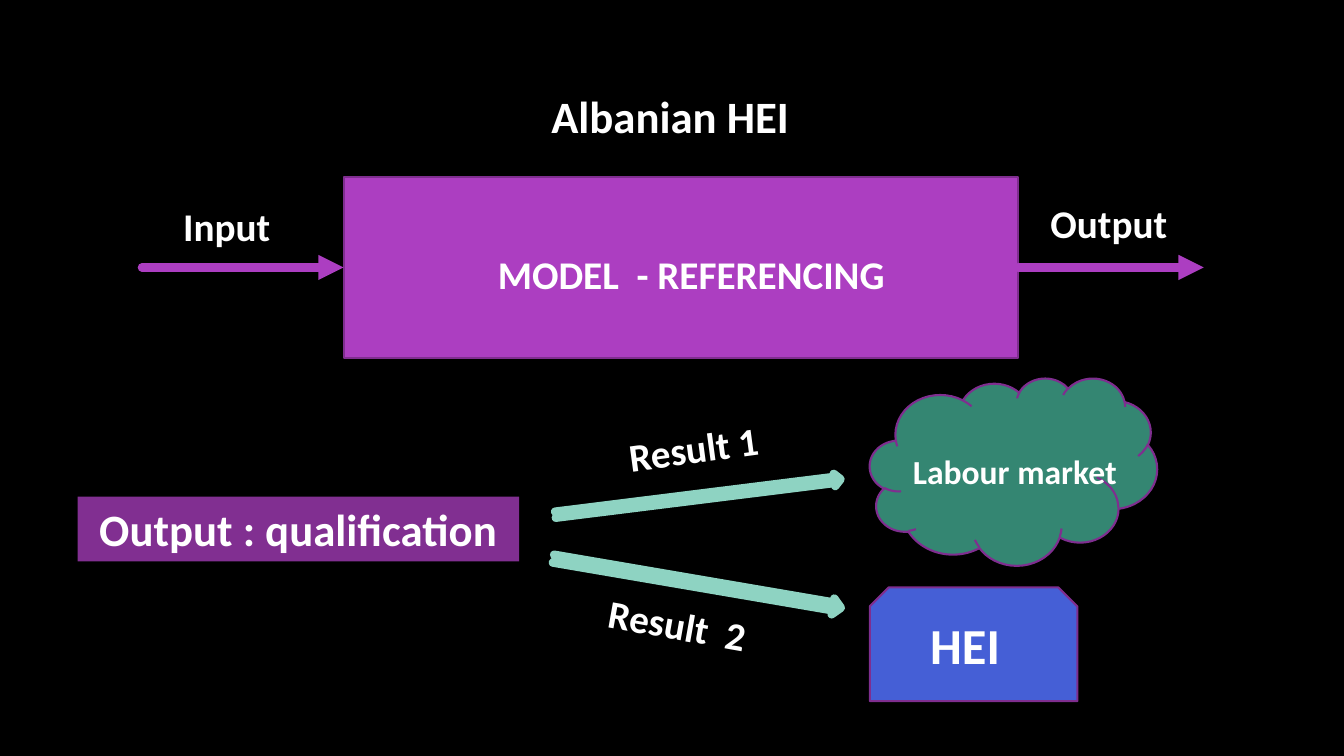
from lxml.etree import SubElement
from pptx import Presentation
from pptx.dml.color import RGBColor
from pptx.enum.shapes import MSO_CONNECTOR, MSO_SHAPE
from pptx.enum.text import MSO_ANCHOR, MSO_AUTO_SIZE, PP_ALIGN
from pptx.oxml.ns import qn
from pptx.util import Inches, Pt

COLUMNS = 32
PURPLE, PLUM, MINT = "AC3EC1", "7F2E8F", "8ED3C2"


def paint(color_format, value):
    color_format.rgb = RGBColor.from_string(value)


class Diagram:
    """Draws on one slide; lengths are cells of a square grid, 32 columns wide."""

    font = "Calibri"
    ink = "FFFFFF"

    def __init__(self, deck, background):
        self.cell = deck.slide_width / COLUMNS
        self.slide = deck.slides.add_slide(deck.slide_layouts[5])
        fill = self.slide.background.fill
        fill.solid()
        paint(fill.fore_color, background)

    def cells(self, *counts):
        return [round(count * self.cell) for count in counts]

    def set_text(self, shape, text, size, align=PP_ALIGN.CENTER):
        frame = shape.text_frame
        frame.word_wrap = True
        frame.auto_size = MSO_AUTO_SIZE.NONE
        frame.vertical_anchor = MSO_ANCHOR.MIDDLE
        frame.text = text
        paragraph = frame.paragraphs[0]
        paragraph.alignment = align
        paragraph.font.name = self.font
        paragraph.font.size = Pt(size)
        paragraph.font.bold = True
        paint(paragraph.font.color, self.ink)

    def title(self, text, box, size):
        heading = self.slide.shapes.title
        heading.left, heading.top, heading.width, heading.height = self.cells(*box)
        self.set_text(heading, text, size)

    def label(self, text, box, size=28, turn=0, align=PP_ALIGN.CENTER):
        caption = self.slide.shapes.add_textbox(*self.cells(*box))
        caption.rotation = turn
        self.set_text(caption, text, size, align)

    def block(self, kind, box, fill, outline=None, weight=1.5, turn=0):
        shape = self.slide.shapes.add_shape(kind, *self.cells(*box))
        shape.shadow.inherit = False
        shape.rotation = turn
        shape.fill.solid()
        paint(shape.fill.fore_color, fill)
        if outline:
            paint(shape.line.color, outline)
            shape.line.width = Pt(weight)
        else:
            shape.line.fill.background()
        return shape

    def arrow(self, start, end):
        connector = self.slide.shapes.add_connector(
            MSO_CONNECTOR.STRAIGHT, *self.cells(*start, *end))
        paint(connector.line.color, PURPLE)
        connector.line.width = Pt(6)
        line = connector._element.spPr.find(qn("a:ln"))
        line.set("cap", "rnd")
        SubElement(line, qn("a:tailEnd"), type="triangle")
        SubElement(connector._element.spPr, qn("a:effectLst"))
        return connector


def main():
    deck = Presentation()
    deck.slide_width, deck.slide_height = Inches(13.33), Inches(7.5)
    diagram = Diagram(deck, "000000")
    diagram.title("Albanian HEI", (10.73, 1.99, 10.46, 1.54), 32)

    model = diagram.block(MSO_SHAPE.RECTANGLE, (8.18, 4.22, 16.06, 4.3), PURPLE, PLUM)
    diagram.label("MODEL  - REFERENCING", (10.3, 5.83, 12.31, 1.37))
    flow_row = 6.37
    diagram.arrow((3.38, flow_row), (8.18, flow_row)).end_connect(model, 1)
    diagram.arrow((24.24, flow_row), (28.66, flow_row)).begin_connect(model, 3)
    diagram.label("Input", (2.71, 4.7, 5.38, 1.37))
    diagram.label("Output", (23.71, 4.63, 5.38, 1.37))

    qualification = diagram.block(
        MSO_SHAPE.RECTANGLE, (1.85, 11.83, 10.51, 1.54), "812F91")
    diagram.set_text(qualification, "Output : qualification", 32)

    results = [
        ("Result 1", (13.82, 9.98, 5.38, 1.37), -7.8, (13.2, 11.69, 6.84, 0.29), -7.1),
        ("Result  2", (13.44, 14.18, 5.38, 1.37), 10.1, (13.13, 13.7, 6.94, 0.38), 9.7),
    ]
    for text, text_box, text_turn, arrow_box, arrow_turn in results:
        diagram.block(MSO_SHAPE.NOTCHED_RIGHT_ARROW, arrow_box, MINT, MINT, 6, arrow_turn)
        diagram.label(text, text_box, turn=text_turn)

    diagram.block(MSO_SHAPE.CLOUD, (20.71, 9, 6.84, 4.46), "348672", PLUM)
    diagram.label("Labour market", (21.5, 10.61, 6.17, 1.2), 24, align=PP_ALIGN.LEFT)
    diagram.block(MSO_SHAPE.SNIP_2_SAME_RECTANGLE, (20.71, 13.99, 4.94, 2.71), "455FD6", PLUM)
    diagram.label("HEI", (21.31, 14.5, 3.34, 1.7), 36)

    deck.save("out.pptx")


if __name__ == "__main__":
    main()
